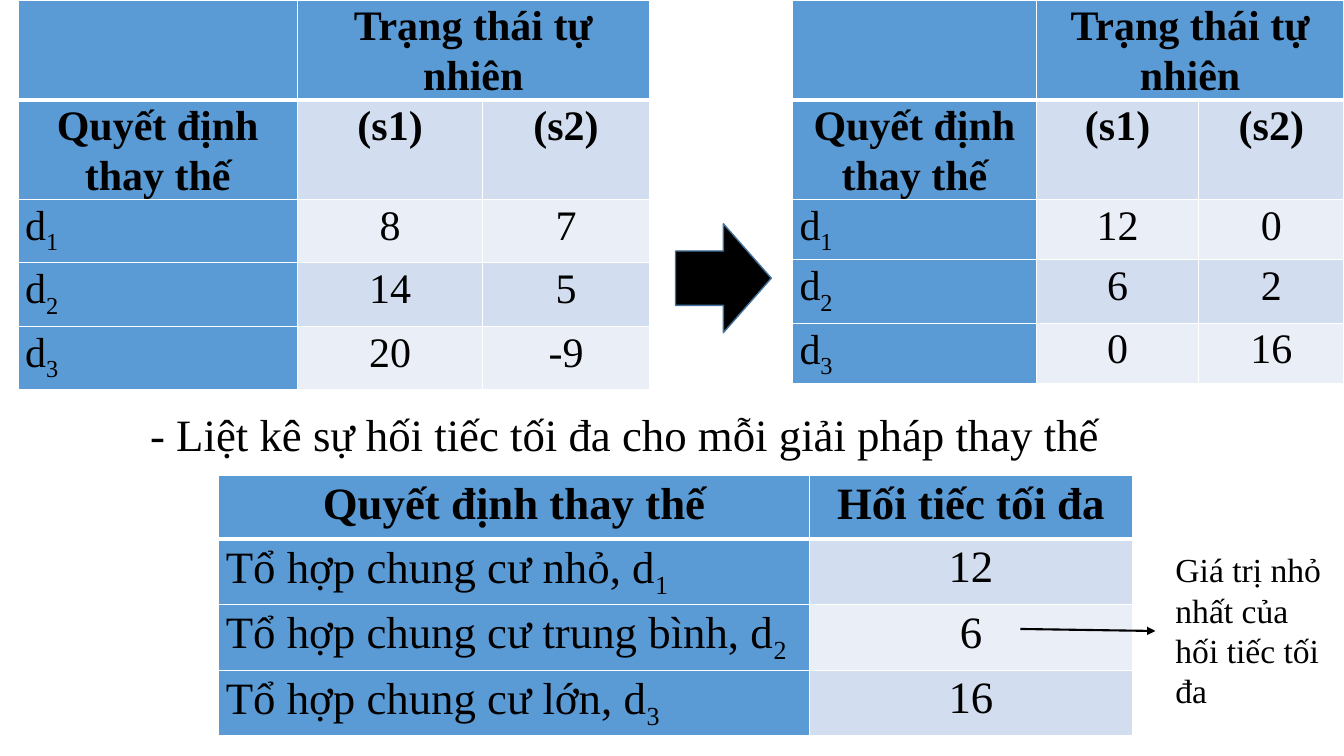
import lxml.etree
import pptx
import pptx.dml.color
import pptx.enum.shapes
import pptx.enum.text
import pptx.oxml.ns
import pptx.util

Inches = pptx.util.Inches
Pt = pptx.util.Pt
RGBColor = pptx.dml.color.RGBColor

BLACK = RGBColor(0x00, 0x00, 0x00)
WHITE = RGBColor(0xFF, 0xFF, 0xFF)
HEADER_BLUE = RGBColor(0x5B, 0x9B, 0xD5)
BAND_DARK = RGBColor(0xD2, 0xDE, 0xEF)
BAND_LIGHT = RGBColor(0xEA, 0xEF, 0xF7)
ARROW_OUTLINE = RGBColor(0x43, 0x73, 0x9E)

CELL_FORMAT = {
    "margin_left": Inches(0.07),
    "margin_right": Inches(0.07),
    "margin_top": 0,
    "margin_bottom": 0,
}
TABLE_FORMAT = {"first_row": False, "horz_banding": False}
STATE_HEADER = [
    ["", "Trạng thái tự nhiên", ""],
    ["Quyết định thay thế", "(s1)", "(s2)"],
]
PAYOFFS = [["d_1", "8", "7"], ["d_2", "14", "5"], ["d_3", "20", "-9"]]
REGRETS = [["d_1", "12", "0"], ["d_2", "6", "2"], ["d_3", "0", "16"]]
MAXIMUM_REGRETS = [
    ["Quyết định thay thế", "Hối tiếc tối đa"],
    ["Tổ hợp chung cư nhỏ, d_1", "12"],
    ["Tổ hợp chung cư trung bình, d_2", "6"],
    ["Tổ hợp chung cư lớn, d_3", "16"],
]


def apply_format(target, values):
    """Set each named attribute of the target."""
    for name, value in values.items():
        setattr(target, name, value)


def add_run(paragraph, text, size, bold=False, subscript=False):
    """Append a black run, lowered when it is a subscript."""
    run = paragraph.add_run()
    run.text = text
    apply_format(run.font, {"name": "Times New Roman", "size": Pt(size), "bold": bold})
    run.font.color.rgb = BLACK
    if subscript:
        run.font._element.set("baseline", "-25000")


def set_borders(cell, row_index):
    """Draw white cell borders, thick under the header row."""
    properties = cell._tc.get_or_add_tcPr()
    widths = {
        "lnL": 1,
        "lnR": 1,
        "lnT": 3 if row_index == 1 else 1,
        "lnB": 3 if row_index == 0 else 1,
    }
    for position, (side, width) in enumerate(widths.items()):
        border = lxml.etree.Element(pptx.oxml.ns.qn(f"a:{side}"), w=str(Pt(width)))
        fill = lxml.etree.SubElement(border, pptx.oxml.ns.qn("a:solidFill"))
        lxml.etree.SubElement(fill, pptx.oxml.ns.qn("a:srgbClr"), val=str(WHITE))
        properties.insert(position, border)


def fill_cell(cell, text, size, bold, row_index, column_index):
    """Colour a cell and write its text, with an underscore before a subscript."""
    apply_format(cell, CELL_FORMAT)
    band = BAND_DARK if row_index % 2 else BAND_LIGHT
    cell.fill.solid()
    cell.fill.fore_color.rgb = HEADER_BLUE if 0 in (row_index, column_index) else band
    set_borders(cell, row_index)
    if not text:
        return
    base, separator, subscript = text.partition("_")
    alignment = pptx.enum.text.PP_ALIGN
    paragraph = cell.text_frame.paragraphs[0]
    apply_format(paragraph, {
        "alignment": alignment.LEFT if separator else alignment.CENTER,
        "line_spacing": 1.07,
    })
    add_run(paragraph, base, size, bold)
    if subscript:
        add_run(paragraph, subscript, size, bold, subscript=True)


def add_decision_table(slide, left, top, widths, heights, rows, size, header_rows):
    """Add a banded table and return it."""
    table = slide.shapes.add_table(
        len(heights), len(widths), Inches(left), Inches(top),
        Inches(sum(widths)), Inches(sum(heights)),
    ).table
    apply_format(table, TABLE_FORMAT)
    for column, width in zip(table.columns, widths):
        column.width = Inches(width)
    for row, height in zip(table.rows, heights):
        row.height = Inches(height)
    for row_index, row in enumerate(rows):
        for column_index, text in enumerate(row):
            cell = table.cell(row_index, column_index)
            fill_cell(cell, text, size, row_index < header_rows, row_index, column_index)
    return table


def add_state_table(slide, left, widths, heights, values):
    """Add a table whose state heading spans both value columns."""
    table = add_decision_table(
        slide, left, 0, widths, heights, STATE_HEADER + values, 30, 2
    )
    table.cell(0, 1).merge(table.cell(0, 2))


def add_text(slide, left, top, width, height, text, size, wrap):
    """Add a text box that grows with its text."""
    box = slide.shapes.add_textbox(
        Inches(left), Inches(top), Inches(width), Inches(height)
    )
    apply_format(box.text_frame, {
        "word_wrap": wrap,
        "auto_size": pptx.enum.text.MSO_AUTO_SIZE.SHAPE_TO_FIT_TEXT,
    })
    add_run(box.text_frame.paragraphs[0], text, size)


def add_block_arrow(slide, left, top, width, height):
    """Add the black block arrow between the state tables."""
    arrow = slide.shapes.add_shape(
        pptx.enum.shapes.MSO_SHAPE.RIGHT_ARROW,
        Inches(left), Inches(top), Inches(width), Inches(height),
    )
    arrow.shadow.inherit = False
    arrow.fill.solid()
    arrow.fill.fore_color.rgb = BLACK
    arrow.line.color.rgb = ARROW_OUTLINE
    arrow.line.width = Pt(1)


def add_pointer(slide, start_x, start_y, end_x, end_y):
    """Add a thin black line ending in a triangle."""
    pointer = slide.shapes.add_connector(
        pptx.enum.shapes.MSO_CONNECTOR.STRAIGHT,
        Inches(start_x), Inches(start_y), Inches(end_x), Inches(end_y),
    )
    pointer.line.color.rgb = BLACK
    pointer.line.width = Pt(1.5)
    properties = pointer._element.spPr
    line = properties.find(pptx.oxml.ns.qn("a:ln"))
    lxml.etree.SubElement(line, pptx.oxml.ns.qn("a:tailEnd"), type="triangle")
    lxml.etree.SubElement(properties, pptx.oxml.ns.qn("a:effectLst"))


def main():
    """Build and save the regret slide."""
    presentation = pptx.Presentation()
    apply_format(presentation, {
        "slide_width": Inches(13.33),
        "slide_height": Inches(7.5),
    })
    slide = presentation.slides.add_slide(presentation.slide_layouts[6])
    add_state_table(
        slide, 7.86, [2.42, 1.61, 1.44], [0.98, 0.98, 0.6, 0.63, 0.6], REGRETS
    )
    add_state_table(
        slide, 0.18, [2.77, 1.84, 1.65], [0.94] * 2 + [0.63] * 3, PAYOFFS
    )
    add_block_arrow(slide, 6.7, 2.22, 0.95, 1.08)
    add_text(
        slide, 1.39, 3.99, 9.71, 0.64,
        "- Liệt kê sự hối tiếc tối đa cho mỗi giải pháp thay thế", 32, False,
    )
    add_decision_table(
        slide, 2.17, 4.72, [5.86, 3.2], [0.63] * 4, MAXIMUM_REGRETS, 32, 1
    )
    add_pointer(slide, 10.12, 6.24, 11.46, 6.26)
    add_text(
        slide, 11.56, 5.4, 1.77, 1.72, "Giá trị nhỏ nhất của hối tiếc tối đa", 24, True
    )
    presentation.save("out.pptx")


if __name__ == "__main__":
    main()
